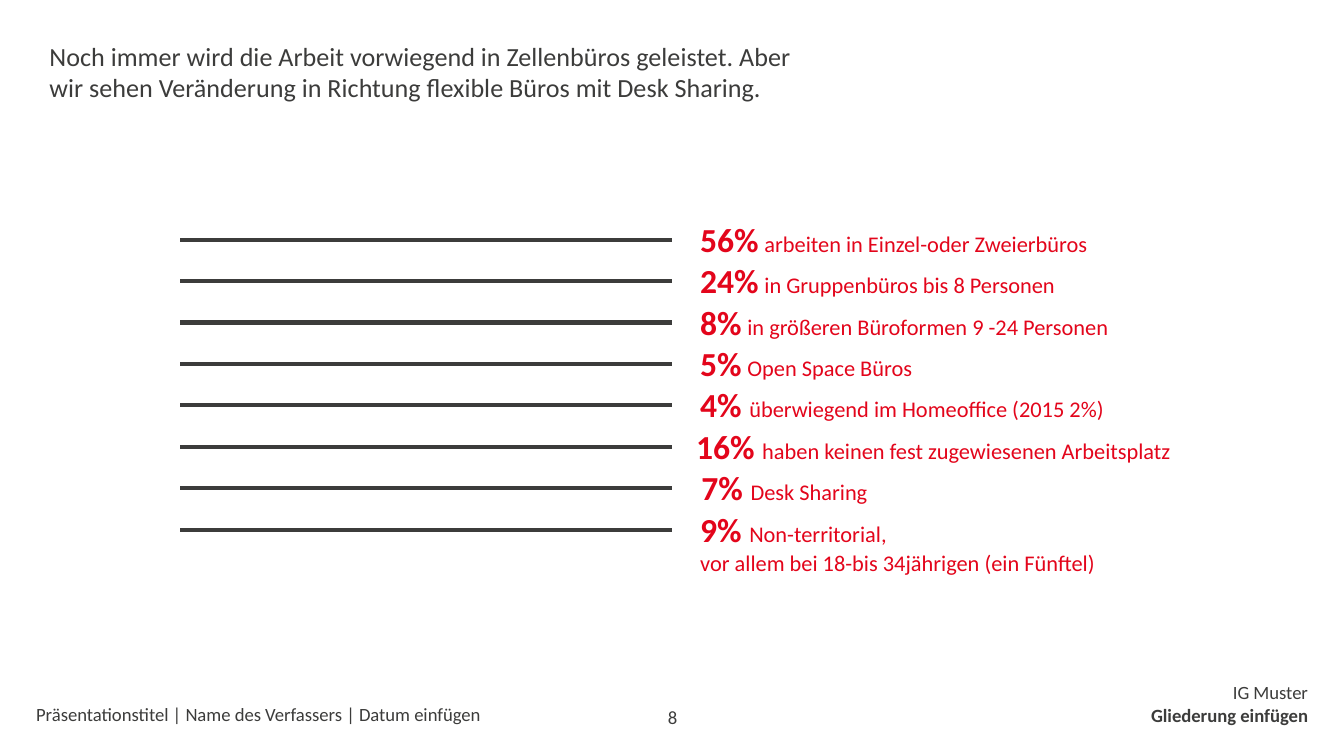
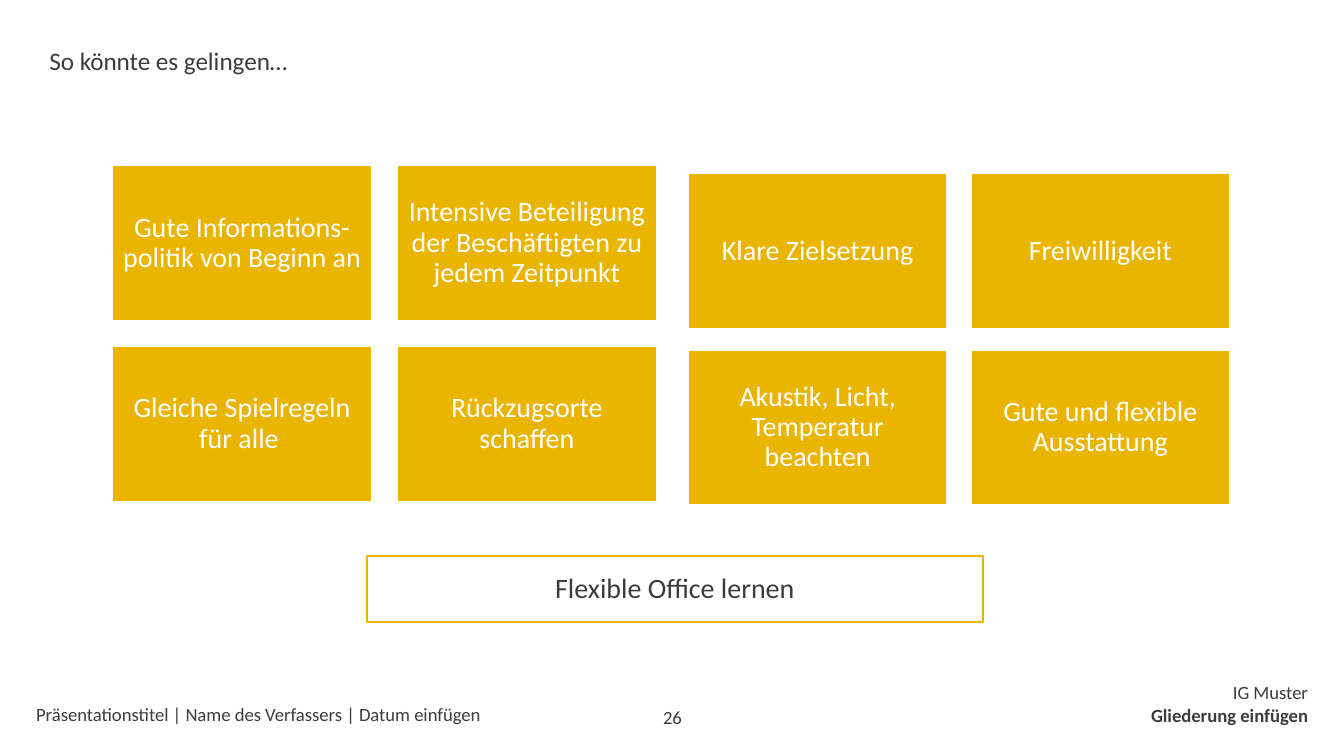
from lxml import etree
from pptx import Presentation
from pptx.dml.color import RGBColor
from pptx.enum.shapes import MSO_CONNECTOR, MSO_SHAPE
from pptx.enum.text import MSO_ANCHOR, PP_ALIGN
from pptx.oxml.ns import qn
from pptx.util import Pt

DARK = RGBColor(0x3C, 0x3C, 0x3B)
RED = RGBColor(0xE3, 0x05, 0x1B)
YELLOW = RGBColor(0xEA, 0xB5, 0x00)
WHITE = RGBColor(0xFF, 0xFF, 0xFF)
FONT = "Calibri"

LEFT, CENTER, RIGHT = PP_ALIGN.LEFT, PP_ALIGN.CENTER, PP_ALIGN.RIGHT
TOP, MIDDLE, BOTTOM = MSO_ANCHOR.TOP, MSO_ANCHOR.MIDDLE, MSO_ANCHOR.BOTTOM
RECT, STRAIGHT = MSO_SHAPE.RECTANGLE, MSO_CONNECTOR.STRAIGHT

MARGIN = 19.4
WIDE_GAP, SMALL_GAP = (18, True), (13.5, False)
INDENT = 27.4

SHARES = [
    ("56%", SMALL_GAP, ["arbeiten in Einzel-oder Zweierbüros"], 0, 265.7, INDENT),
    ("24%", SMALL_GAP, ["in Gruppenbüros bis 8 Personen"], 0, 249.1, INDENT),
    ("8%", SMALL_GAP, ["in größeren Büroformen 9 -24 Personen"], 0, 276.5, INDENT),
    ("5%", SMALL_GAP, ["Open Space Büros"], 0, 166.3, INDENT),
    ("4%", WIDE_GAP, ["überwiegend im Homeoffice (2015 2%)"], 0, 272.9, INDENT),
    ("16%", WIDE_GAP, ["haben keinen fest zugewiesenen Arbeitsplatz"], 25.2, 289.4, 0),
    ("7%", WIDE_GAP, ["Desk Sharing"], 28.1, 112.3, 0),
    ("9%", WIDE_GAP,
     ["Non-territorial, ", "vor allem bei 18-bis 34jährigen (ein Fünftel)"], 0, 360, INDENT),
]

EARLY_STEPS = [
    ["Gute Informations-politik von Beginn an",
     "Intensive Beteiligung der Beschäftigten zu jedem Zeitpunkt"],
    ["Gleiche Spielregeln für alle ", "Rückzugsorte schaffen"],
]
LATER_STEPS = [
    ["Klare Zielsetzung", "Freiwilligkeit"],
    ["Akustik, Licht, Temperatur beachten", "Gute und flexible Ausstattung"],
]


def add_run(p, text, size, color=DARK, bold=False):
    r = p.add_run()
    r.text = text
    r.font.name = FONT
    r.font.size = Pt(size)
    r.font.bold = bold
    r.font.color.rgb = color


def set_insets(tf, inset):
    tf.margin_left = tf.margin_right = tf.margin_top = tf.margin_bottom = Pt(inset)


def add_text_frame(slide, x, y, w, h, wrap=True):
    tf = slide.shapes.add_textbox(Pt(x), Pt(y), Pt(w), Pt(h)).text_frame
    tf.word_wrap = wrap
    return tf


def add_title(slide, text, y, w, h, size, wrap=True):
    tf = add_text_frame(slide, MARGIN, y, w, h, wrap)
    add_run(tf.paragraphs[0], text, size)


def add_footer_text(slide, x, y, w, h, lines, align, anchor):
    tf = add_text_frame(slide, x, y, w, h)
    set_insets(tf, 0)
    tf.vertical_anchor = anchor
    for i, (text, bold) in enumerate(lines):
        p = tf.add_paragraph() if i else tf.paragraphs[0]
        p.alignment = align
        add_run(p, text, 10, bold=bold)


def add_footer(slide, number):
    add_footer_text(slide, MARGIN, 376.6, 280, 12.2,
                    [("Präsentationstitel | Name des Verfassers | Datum einfügen", False)],
                    LEFT, BOTTOM)
    add_footer_text(slide, 481.7, 365, 219, 24.5,
                    [("IG Muster", False), ("Gliederung einfügen", True)], RIGHT, TOP)
    add_footer_text(slide, 325.4, 368.6, 69.8, 21.6, [(str(number), False)], CENTER, BOTTOM)


def add_rules(slide, x, y, w, pitch, count):
    for i in range(count):
        rule_y = Pt(y + i * pitch)
        line = slide.shapes.add_connector(STRAIGHT, Pt(x), rule_y, Pt(x + w), rule_y)
        line.line.color.rgb = DARK
        line.line.width = Pt(2.25)
        etree.SubElement(line._element.spPr, qn("a:effectLst"))


def add_shares(slide, x, y, pitch):
    for i, (value, gap, lines, dx, w, indent) in enumerate(SHARES):
        h = 28.8 if len(lines) == 1 else 43.9
        tf = add_text_frame(slide, x + dx, y + i * pitch, w, h, wrap=len(lines) > 1)
        p = tf.paragraphs[0]
        if indent:
            p.level = 1
            pPr = p._p.get_or_add_pPr()
            pPr.set("marL", str(Pt(indent)))
            pPr.set("indent", "0")
        gap_size, gap_bold = gap
        add_run(p, value, 18, RED, True)
        add_run(p, " ", gap_size, RED, gap_bold)
        for j, text in enumerate(lines):
            if j:
                p.add_line_break()
            add_run(p, text, 12, RED)


def add_box(slide, x, y, w, h, text, line_color, text_color, fill=None):
    sp = slide.shapes.add_shape(RECT, Pt(x), Pt(y), Pt(w), Pt(h))
    sp.shadow.inherit = False
    if fill is None:
        sp.fill.background()
    else:
        sp.fill.solid()
        sp.fill.fore_color.rgb = fill
    sp.line.color.rgb = line_color
    sp.line.width = Pt(1)
    tf = sp.text_frame
    tf.word_wrap = True
    tf.vertical_anchor = MIDDLE
    set_insets(tf, 4.5)
    p = tf.paragraphs[0]
    p.alignment = CENTER
    p.line_spacing = 0.9
    add_run(p, text, 15, text_color)


def add_step_grid(slide, x, y, dx, dy, steps):
    for row, texts in enumerate(steps):
        for col, text in enumerate(texts):
            add_box(slide, x + col * dx, y + row * dy, 139, 83.4, text, WHITE, WHITE, YELLOW)


def build_office_shares(prs):
    slide = prs.slides.add_slide(prs.slide_layouts[6])
    add_footer(slide, 8)
    add_title(slide, "Noch immer wird die Arbeit vorwiegend in Zellenbüros geleistet. "
              "Aber wir sehen Veränderung in Richtung flexible Büros mit Desk Sharing.",
              18, 423.4, 58.3, 14)
    pitch = 22.2
    add_rules(slide, 96.5, 128.4, 263.5, pitch, len(SHARES))
    add_shares(slide, 340.6, 113.6, pitch)


def build_success_steps(prs):
    slide = prs.slides.add_slide(prs.slide_layouts[6])
    add_footer(slide, 26)
    add_step_grid(slide, 60.2, 88.6, 152.6, 96.8, EARLY_STEPS)
    add_step_grid(slide, 368.6, 93, 151.4, 94.3, LATER_STEPS)
    add_box(slide, 196.6, 298, 329.8, 35.4, "Flexible Office lernen", YELLOW, DARK)
    add_title(slide, "So könnte es gelingen…", 20.9, 157, 23.8, 13.5, wrap=False)


def main():
    prs = Presentation()
    prs.slide_width, prs.slide_height = Pt(720), Pt(405)
    build_office_shares(prs)
    build_success_steps(prs)
    prs.save("out.pptx")


if __name__ == "__main__":
    main()
